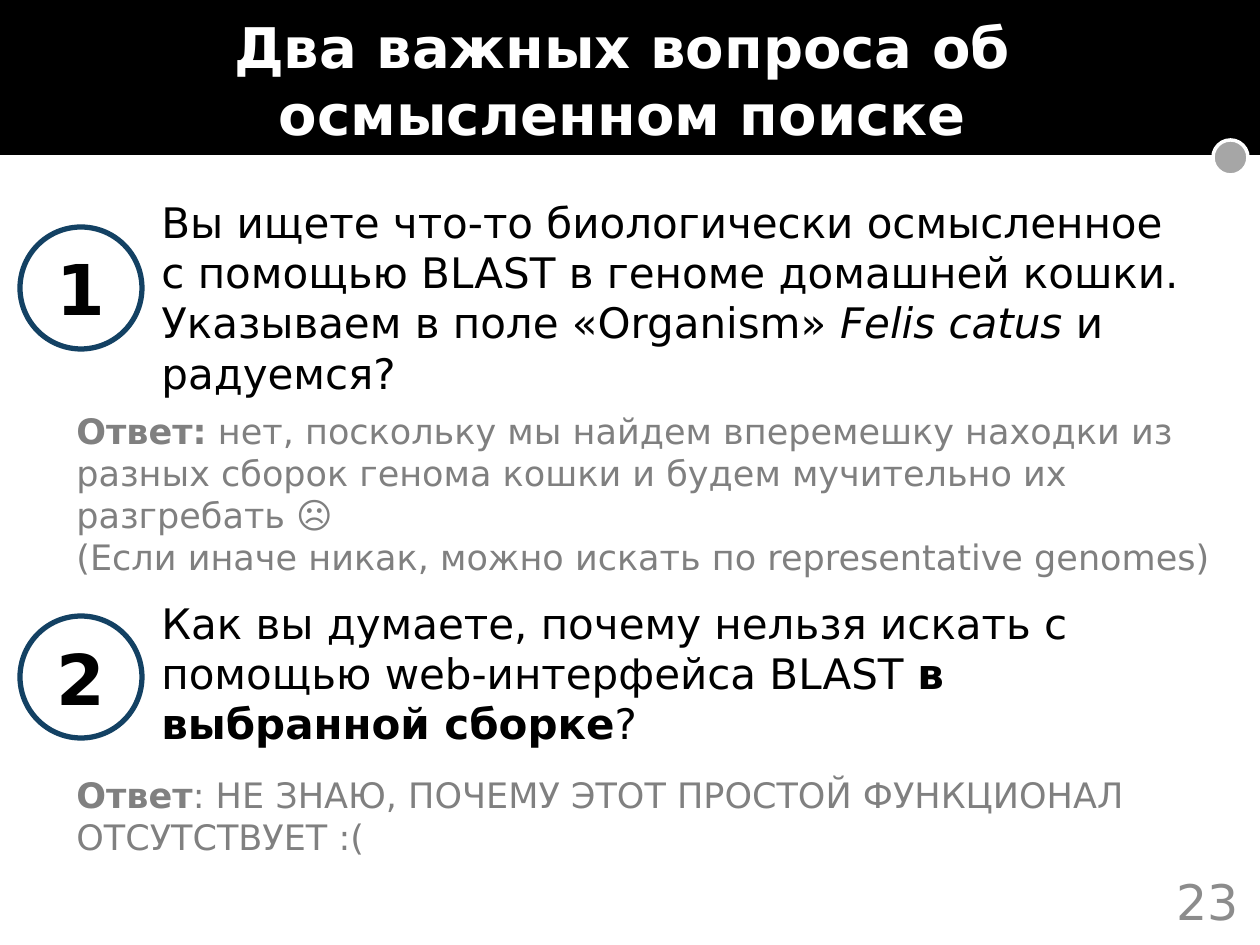
from lxml import etree
from pptx import Presentation
from pptx import util as u
from pptx.dml.color import RGBColor
from pptx.enum import shapes, text
from pptx.oxml.ns import qn

PX = u.Inches(1) / 126
FONT = "DejaVu Sans"
COLORS = {
    "black": "000000",
    "white": "FFFFFF",
    "dot": "A6A6A6",
    "ring": "134163",
    "answer": "808080",
    "number": "8C8C8C",
}
QUESTIONS = [
    {
        "number": "1",
        "box": (20, 227, 1210, 359),
        "question_box": (129, -37, 1062, 217),
        "question": [[
            ("Вы ищете что-то биологически осмысленное с помощью BLAST в геноме "
             "домашней кошки. Указываем в поле «Organism» ", ""),
            ("Felis catus", "italic"),
            (" и радуемся?", ""),
        ]],
        "answer_box": (44, 176, 1166, 183),
        "answer": [
            [
                ("Ответ:", "bold"),
                (" нет, поскольку мы найдем вперемешку находки из разных сборок "
                 "генома кошки и будем мучительно их разгребать ☹", ""),
            ],
            [("(Если иначе никак, можно искать по representative genomes)", "")],
        ],
    },
    {
        "number": "2",
        "box": (20, 616, 1186, 248),
        "question_box": (129, -25, 1047, 165),
        "question": [[
            ("Как вы думаете, почему нельзя искать с помощью web-интерфейса BLAST ", ""),
            ("в выбранной сборке", "bold"),
            ("?", ""),
        ]],
        "answer_box": (44, 151, 1142, 97),
        "answer": [[
            ("Ответ", "bold"),
            (": НЕ ЗНАЮ, ПОЧЕМУ ЭТОТ ПРОСТОЙ ФУНКЦИОНАЛ ОТСУТСТВУЕТ :(", ""),
        ]],
    },
]


def px(*lengths):
    return [round(length * PX) for length in lengths]


def rgb(name):
    return RGBColor.from_string(COLORS[name])


def write(frame, paragraphs, size, color, align=text.PP_ALIGN.LEFT):
    frame.word_wrap = True
    for index, parts in enumerate(paragraphs):
        paragraph = frame.add_paragraph() if index else frame.paragraphs[0]
        paragraph.alignment = align
        for words, style in parts:
            run = paragraph.add_run()
            run.text = words
            run.font.name = FONT
            run.font.size = u.Pt(size)
            run.font.color.rgb = rgb(color)
            run.font.bold = style == "bold"
            run.font.italic = style == "italic"


def add_text(slide, box, paragraphs, size, color, align=text.PP_ALIGN.LEFT):
    frame = slide.shapes.add_textbox(*px(*box)).text_frame
    write(frame, paragraphs, size, color, align)
    frame.auto_size = text.MSO_AUTO_SIZE.SHAPE_TO_FIT_TEXT
    return frame


def add_filled(slide, kind, box, fill, line=None, width=0):
    shape = slide.shapes.add_shape(kind, *px(*box))
    shape.shadow.inherit = False
    shape.fill.solid()
    shape.fill.fore_color.rgb = rgb(fill)
    if line:
        shape.line.color.rgb = rgb(line)
        shape.line.width = u.Pt(width)
    else:
        shape.line.fill.background()
    return shape


def add_header(slide, box, title):
    left, top, width, height = box
    add_filled(slide, shapes.MSO_SHAPE.RECTANGLE, box, "black")
    rule_y = top + height + 2
    rule = slide.shapes.add_connector(
        shapes.MSO_CONNECTOR.STRAIGHT,
        *px(left, rule_y, left + width - 42, rule_y))
    rule.line.color.rgb = rgb("white")
    rule.line.width = u.Pt(2)
    etree.SubElement(rule._element.spPr, qn("a:effectLst"))
    add_filled(slide, shapes.MSO_SHAPE.OVAL,
               (left + width - 47, rule_y - 17, 35, 35), "dot", "white", 2)
    add_text(slide, (left + 10, top + 6, width - 35, height - 6),
             [[(title, "bold")]], 32, "white", text.PP_ALIGN.CENTER)


def add_question(slide, box, item):
    left, top = box[:2]

    def place(area):
        return left + area[0], top + area[1], area[2], area[3]

    circle = add_filled(slide, shapes.MSO_SHAPE.OVAL, place((0, 0, 122, 122)),
                        "white", "ring", 3)
    circle.text_frame.vertical_anchor = text.MSO_ANCHOR.MIDDLE
    write(circle.text_frame, [[(item["number"], "bold")]], 40, "black",
          text.PP_ALIGN.CENTER)
    add_text(slide, place(item["question_box"]), item["question"], 24, "black")
    add_text(slide, place(item["answer_box"]), item["answer"], 20, "answer")


def add_slide_number(slide, box, number):
    frame = add_text(slide, box, [[(number, "")]], 28, "number", text.PP_ALIGN.RIGHT)
    frame.auto_size = text.MSO_AUTO_SIZE.NONE
    frame.vertical_anchor = text.MSO_ANCHOR.MIDDLE


def main():
    presentation = Presentation()
    presentation.slide_width, presentation.slide_height = px(1260, 945)
    slide = presentation.slides.add_slide(presentation.slide_layouts[6])
    add_header(slide, (0, 0, 1260, 155), "Два важных вопроса об осмысленном поиске")
    for item in QUESTIONS:
        add_question(slide, item["box"], item)
    add_slide_number(slide, (958, 876, 293, 50), "23")
    presentation.save("out.pptx")


if __name__ == "__main__":
    main()
